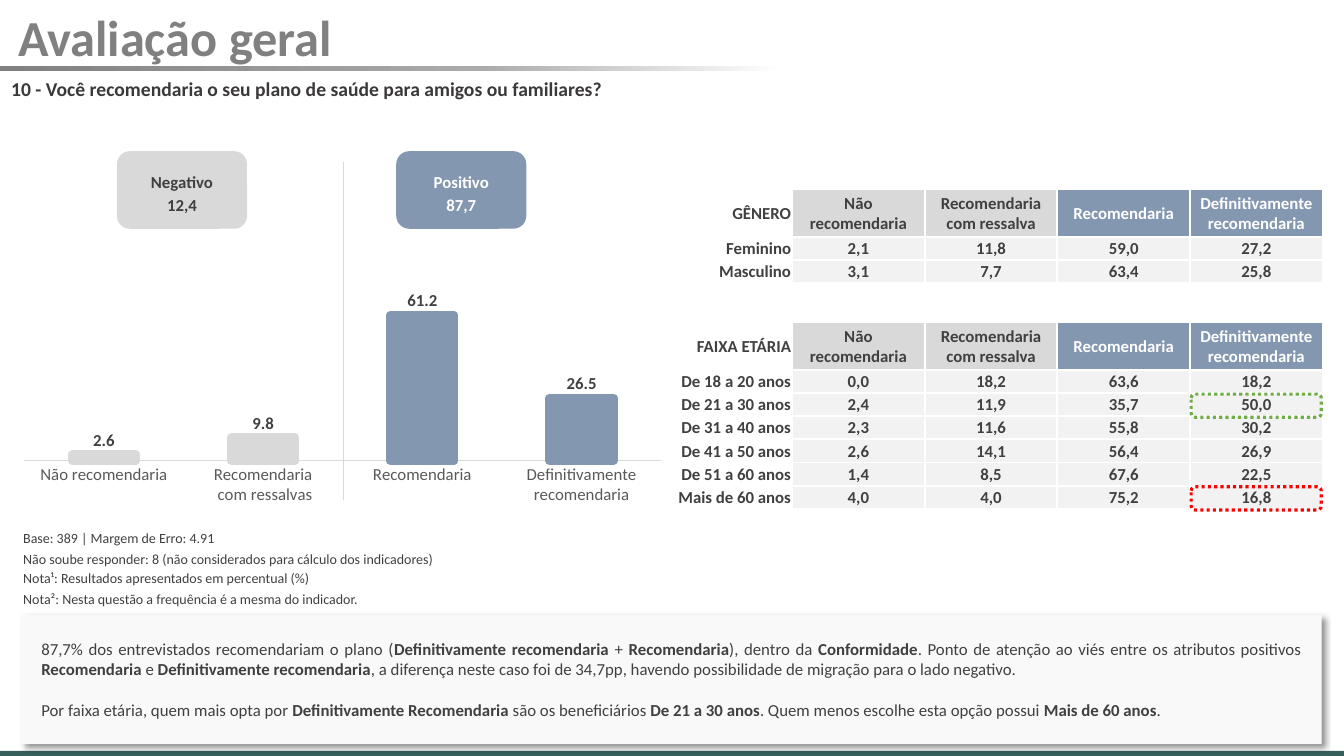
from lxml import etree
from pptx import Presentation
from pptx.chart.data import CategoryChartData
from pptx.dml.color import RGBColor
from pptx.enum.chart import XL_CHART_TYPE, XL_LABEL_POSITION, XL_TICK_MARK
from pptx.enum.dml import MSO_LINE
from pptx.enum.shapes import MSO_CONNECTOR, MSO_SHAPE
from pptx.enum.text import MSO_ANCHOR, MSO_AUTO_SIZE, PP_ALIGN
from pptx.oxml import parse_xml
from pptx.oxml.ns import qn
from pptx.util import Inches, Pt

LEFT, CENTER, RIGHT, JUSTIFY = PP_ALIGN.LEFT, PP_ALIGN.CENTER, PP_ALIGN.RIGHT, PP_ALIGN.JUSTIFY
TOP, MIDDLE = MSO_ANCHOR.TOP, MSO_ANCHOR.MIDDLE
RECT, ROUNDED = MSO_SHAPE.RECTANGLE, MSO_SHAPE.ROUNDED_RECTANGLE
FONT = "Calibri"
DRAWING = "http://schemas.openxmlformats.org/drawingml/2006/main"

# Content
COLORS = {"title": "808080", "question": "3B3838", "text": "404040", "white": "FFFFFF",
          "negative": "D9D9D9", "positive": "8497B0", "cell": "F2F2F2", "panel": "F9F9F9",
          "footer": "365E5A", "axis": "595959", "high": "70AD47", "low": "FF0000",
          "black": "000000"}
TITLE = "Avaliação geral"
QUESTION = "10 - Você recomendaria o seu plano de saúde para amigos ou familiares?"
ANSWERS = [("Não recomendaria", 2.6, "negative"),
           ("Recomendaria\n com ressalvas", 9.8, "negative"),
           ("Recomendaria", 61.2, "positive"),
           ("Definitivamente recomendaria", 26.5, "positive")]
CARDS = [("Positivo", "87,7", "positive", "white", 3.93),
         ("Negativo", "12,4", "negative", "text", 1.16)]
HEADINGS = ["Não\vrecomendaria", "Recomendaria\vcom ressalva", "Recomendaria",
            "Definitivamente\vrecomendaria"]
PROFILE = [["GÊNERO", *HEADINGS],
           ["Feminino", "2,1", "11,8", "59,0", "27,2"],
           ["Masculino", "3,1", "7,7", "63,4", "25,8"],
           [""] * 5,
           ["FAIXA ETÁRIA", *HEADINGS],
           ["De 18 a 20 anos", "0,0", "18,2", "63,6", "18,2"],
           ["De 21 a 30 anos", "2,4", "11,9", "35,7", "50,0"],
           ["De 31 a 40 anos", "2,3", "11,6", "55,8", "30,2"],
           ["De 41 a 50 anos", "2,6", "14,1", "56,4", "26,9"],
           ["De 51 a 60 anos", "1,4", "8,5", "67,6", "22,5"],
           ["Mais de 60 anos", "4,0", "4,0", "75,2", "16,8"]]
HEADER_ROWS, GAP_ROW = (0, 4), 3
HIGHLIGHTS = [(6, "high"), (10, "low")]
NOTES = ["Base: 389 | Margem de Erro: 4.91",
         "Não soube responder: 8 (não considerados para cálculo dos indicadores)",
         "Nota¹: Resultados apresentados em percentual (%)",
         "Nota²: Nesta questão a frequência é a mesma do indicador."]
# Odd pieces of each paragraph are bold
SUMMARY = [["87,7% dos entrevistados recomendariam o plano (", "Definitivamente recomendaria ",
            "+ ", "Recomendaria", "), dentro da ", "Conformidade",
            ". Ponto de atenção ao viés entre os atributos positivos ", "Recomendaria ", "e ",
            "Definitivamente recomendaria",
            ", a diferença neste caso foi de 34,7pp, havendo possibilidade de migração "
            "para o lado negativo."],
           ["Por faixa etária, quem mais opta por", " Definitivamente Recomendaria ",
            "são os beneficiários ", "De 21 a 30 anos",
            ". Quem menos escolhe esta opção possui ", "Mais de 60 anos", "."]]


def rgb(name):
    return RGBColor.from_string(COLORS[name])


def set_font(font, size, color, bold=None):
    font.name, font.size, font.bold = FONT, Pt(size), bold
    font.color.rgb = rgb(color)


def write(frame, text, size, color, bold=None, align=LEFT):
    para = frame.paragraphs[0]
    para.text, para.alignment = text, align
    set_font(para.font, size, color, bold)


def add_box(page, kind, at, fill=None):
    shape = page.shapes.add_shape(kind, *map(Inches, at))
    shape.shadow.inherit = False
    shape.line.fill.background()
    if fill:
        shape.fill.solid()
        shape.fill.fore_color.rgb = rgb(fill)
    else:
        shape.fill.background()
    return shape


def add_text(page, at, text, size, color, align=LEFT):
    frame = page.shapes.add_textbox(*map(Inches, at)).text_frame
    frame.word_wrap = True
    write(frame, text, size, color, True, align)
    return frame


def add_grid(page, at, widths, heights):
    grid = page.shapes.add_table(len(heights), len(widths), *map(Inches, at)).table
    grid.first_row = grid.horz_banding = False
    for column, width in zip(grid.columns, widths):
        column.width = Inches(width)
    for row, height in zip(grid.rows, heights):
        row.height = Inches(height)
    for cell in grid.iter_cells():
        cell.margin_left = cell.margin_right = cell.margin_top = Inches(0.01)
        cell.margin_bottom = 0
        cell.vertical_anchor = MIDDLE
        for side in ("lnL", "lnR", "lnT", "lnB"):
            cell._tc.get_or_add_tcPr().append(parse_xml(
                f'<a:{side} xmlns:a="{DRAWING}" w="19050"><a:solidFill>'
                f'<a:srgbClr val="{COLORS["white"]}"/></a:solidFill></a:{side}>'))
        cell.fill.background()
    return grid


deck = Presentation()
deck.slide_width, deck.slide_height = Inches(13.33), Inches(7.5)
page = deck.slides.add_slide(deck.slide_layouts[5])

# Title, gradient rule and footer
title = page.shapes.title
title.left, title.top, title.width, title.height = map(Inches, (0.08, 0.06, 13.11, 0.68))
title.text_frame.auto_size = MSO_AUTO_SIZE.NONE
title.text_frame.vertical_anchor = MIDDLE
write(title.text_frame, TITLE, 36, "title", True)
title.text_frame.paragraphs[0].line_spacing = 0.9
rule = add_box(page, RECT, (0, 0.65, 8.53, 0.05), "title")
stops = "".join(f'<a:gs pos="{share}000"><a:srgbClr val="{color}"/></a:gs>'
                for share, color in ((0, "808080"), (56, "ABABAB"), (91, "FFFFFF")))
solid = rule._element.spPr.find(qn("a:solidFill"))
solid.getparent().replace(solid, parse_xml(
    f'<a:gradFill xmlns:a="{DRAWING}"><a:gsLst>{stops}</a:gsLst><a:lin ang="0"/></a:gradFill>'))
add_box(page, RECT, (0, 7.45, 13.33, 0.05), "footer")
question = add_text(page, (0, 0.7, 13.02, 0.35), QUESTION, 14, "question")
question.margin_left = question.margin_right = Inches(0.11)
question.margin_top = question.margin_bottom = Inches(0.06)

# Profile table
table_left, table_top, column_width = 6.54, 1.88, 1.316
heights = [0.47 if r in HEADER_ROWS else 0.39 if r == GAP_ROW else 0.23
           for r in range(len(PROFILE))]
profile = add_grid(page, (table_left, table_top, column_width * 5, sum(heights)),
                   [column_width] * 5, heights)
for r, values in enumerate(PROFILE):
    for c, value in enumerate(values):
        cell = profile.cell(r, c)
        header = r in HEADER_ROWS
        on_blue = header and c > 2
        write(cell.text_frame, value, 12, "white" if on_blue else "text", True,
              CENTER if c else RIGHT)
        if c and r != GAP_ROW:
            cell.fill.solid()
            cell.fill.fore_color.rgb = rgb(
                "positive" if on_blue else "negative" if header else "cell")

# Highest and lowest age groups
for r, color in HIGHLIGHTS:
    mark = add_box(page, ROUNDED, (table_left + 4 * column_width + 0.01,
                                   table_top + sum(heights[:r]) + 0.01, 1.29, 0.23))
    mark.line.color.rgb = rgb(color)
    mark.line.width, mark.line.dash_style = Pt(2.25), MSO_LINE.ROUND_DOT

# Notes
notes = add_grid(page, (0.22, 5.23, 5.17, 0.84), [4.31, 0.86], [0.21] * len(NOTES))
for r, note in enumerate(NOTES):
    cell = notes.cell(r, 0)
    if r:
        cell.merge(notes.cell(r, 1))
    cell.vertical_anchor = TOP if r > 1 else MIDDLE
    write(cell.text_frame, note, 10, "text")
set_font(notes.cell(0, 1).text_frame.paragraphs[0].font, 10, "text")

# Answer chart
data = CategoryChartData(number_format="0.0")
data.categories = [answer[0] for answer in ANSWERS]
data.add_series("Series 1", [answer[1] for answer in ANSWERS])
chart = page.shapes.add_chart(XL_CHART_TYPE.COLUMN_CLUSTERED,
                              *map(Inches, (0.11, 2.15, 6.58, 2.92)), data).chart
chart.has_legend = chart.has_title = False
set_font(chart.font, 10, "black")
plot = chart.plots[0]
plot.gap_width, plot.overlap, plot.vary_by_categories = 150, -25, False
plot.has_data_labels = True
labels = plot.data_labels
labels.show_value, labels.position = True, XL_LABEL_POSITION.OUTSIDE_END
labels.number_format, labels.number_format_is_linked = "0.0", False
set_font(labels.font, 12, "text", True)
for index, (_, _, color) in enumerate(ANSWERS):
    look = plot.series[0].points[index].format
    look.fill.solid()
    look.fill.fore_color.rgb = look.line.color.rgb = rgb(color)
    look.line.width = Pt(6)
    etree.SubElement(look.line._get_or_add_ln(), qn("a:round"))
values, answers = chart.value_axis, chart.category_axis
values.visible = values.has_major_gridlines = False
values.minimum_scale, values.maximum_scale = 0, 100
answers.major_tick_mark = XL_TICK_MARK.NONE
answers.format.line.color.rgb, answers.format.line.width = rgb("negative"), Pt(0.75)
set_font(answers.tick_labels.font, 12, "axis")
area = chart._chartSpace.chart.plotArea
for old in area.findall(qn("c:layout")):
    area.remove(old)
layout = etree.Element(qn("c:layout"))
manual = etree.SubElement(layout, qn("c:manualLayout"))
for tag, value in (("layoutTarget", "inner"), ("xMode", "edge"), ("yMode", "edge"),
                   ("x", "0.02"), ("y", "0.02"), ("w", "0.96"), ("h", "0.81")):
    etree.SubElement(manual, qn(f"c:{tag}")).set("val", value)
area.insert(0, layout)

# Total cards and divider
for name, total, fill, color, left in CARDS:
    card = add_box(page, ROUNDED, (left, 1.5, 1.29, 0.77), fill)
    card.text_frame.vertical_anchor = MIDDLE
    card.text_frame.margin_bottom = Inches(0.22)
    write(card.text_frame, name, 12, color, True, CENTER)
    add_text(page, (left + 0.29, 1.88, 0.71, 0.3), total, 12, color, CENTER)
divider = page.shapes.add_connector(MSO_CONNECTOR.STRAIGHT,
                                    *map(Inches, (3.41, 1.61, 3.41, 4.96)))
divider.line.color.rgb, divider.line.width = rgb("negative"), Pt(0.5)
etree.SubElement(divider._element.spPr, qn("a:effectLst"))

# Summary panel
panel = add_box(page, RECT, (0.21, 6.1, 12.9, 1.28), "panel")
panel._element.spPr.find(qn("a:effectLst")).append(parse_xml(
    f'<a:outerShdw xmlns:a="{DRAWING}" blurRad="50800" dist="38100" dir="2700000">'
    f'<a:srgbClr val="{COLORS["black"]}"><a:alpha val="40000"/></a:srgbClr></a:outerShdw>'))
frame = panel.text_frame
frame.vertical_anchor = MIDDLE
frame.margin_left = frame.margin_right = Inches(0.2)
frame.margin_top = frame.margin_bottom = Inches(0.04)
for number, pieces in enumerate(SUMMARY):
    para = frame.add_paragraph() if number else frame.paragraphs[0]
    para.alignment = JUSTIFY
    if number:
        para.space_before = Pt(14.5)
    set_font(para.font, 12, "text")
    for index, piece in enumerate(pieces):
        span = para.add_run()
        span.text, span.font.bold = piece, index % 2 == 1

deck.save("out.pptx")
